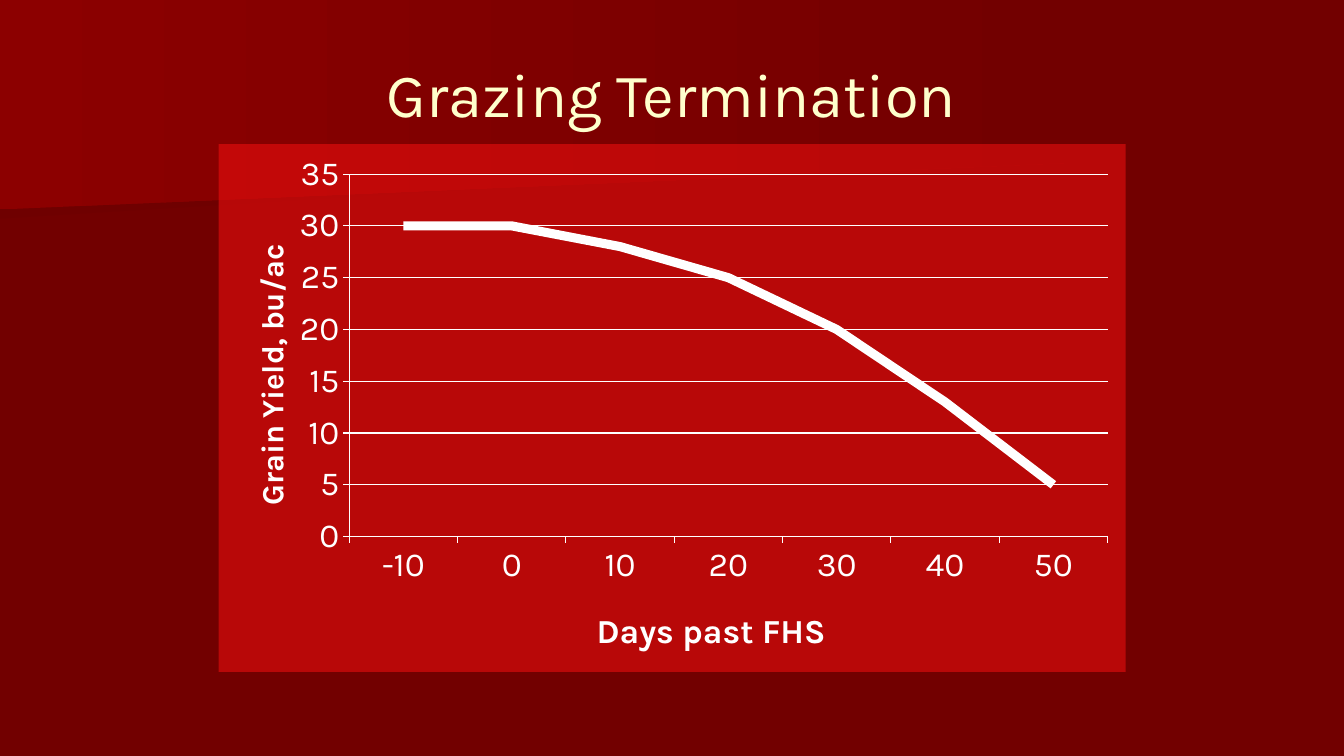
"""Build the Grazing Termination slide with its grain yield line chart."""
import pptx
import pptx.chart.data
import pptx.dml.color
import pptx.enum.chart
import pptx.enum.text
import pptx.oxml
import pptx.oxml.ns
import pptx.util

Cm = pptx.util.Cm
Pt = pptx.util.Pt
RGBColor = pptx.dml.color.RGBColor
qn = pptx.oxml.ns.qn

DARK_RED = RGBColor(0x72, 0x00, 0x00)
SHADE_RED = RGBColor(0x6F, 0x00, 0x00)
GLOW_RED = RGBColor(0x8C, 0x00, 0x00)
PANEL_RED = RGBColor(0xFF, 0x11, 0x11)
CREAM = RGBColor(0xFF, 0xFF, 0xCC)
WHITE = RGBColor(0xFF, 0xFF, 0xFF)

DAYS = ["-10", "0", "10", "20", "30", "40", "50"]
YIELDS = [30, 30, 28, 25, 20, 13, 5]


class SlideBuilder:
    """Hold the style and the current slide."""

    font_name = "Karla"

    def __init__(self, presentation):
        """Add a title-only slide with a dark red background."""
        self.slide = presentation.slides.add_slide(presentation.slide_layouts[5])
        background = self.slide.background.fill
        background.solid()
        background.fore_color.rgb = DARK_RED

    def style_font(self, font, size, color, bold=False):
        """Apply the slide's typeface with a size and colour."""
        font.name = self.font_name
        font.size = Pt(size)
        font.color.rgb = color
        font.bold = bold

    def add_band(self, points, start_color):
        """Draw a polygon that fades from left to right into the background."""
        vertices = [(Cm(x), Cm(y)) for x, y in points]
        builder = self.slide.shapes.build_freeform(*vertices[0])
        builder.add_line_segments(vertices[1:], close=True)
        band = builder.convert_to_shape()
        band.shadow.inherit = False
        band.line.fill.background()
        band.fill.gradient()
        band.fill.gradient_angle = 0
        for stop, color in zip(band.fill.gradient_stops, (start_color, DARK_RED)):
            stop.color.rgb = color

    def add_title(self, text, left, top, width, height):
        """Place the title in front of the bands."""
        title = self.slide.shapes.title
        title.element.getparent().append(title.element)
        title.left, title.top, title.width, title.height = map(Cm, (left, top, width, height))
        text_frame = title.text_frame
        text_frame.text = text
        text_frame.vertical_anchor = pptx.enum.text.MSO_ANCHOR.MIDDLE
        paragraph = text_frame.paragraphs[0]
        paragraph.alignment = pptx.enum.text.PP_ALIGN.CENTER
        self.style_font(paragraph.runs[0].font, 44, CREAM)

    def set_layout(self, element, index, inner=False, **fractions):
        """Position a chart part by fractions of the chart area."""
        current = element.find(qn("c:layout"))
        if current is not None:
            element.remove(current)
        target = '<c:layoutTarget val="inner"/>' if inner else ""
        modes = '<c:xMode val="edge"/><c:yMode val="edge"/>'
        values = "".join(f'<c:{key} val="{value}"/>' for key, value in fractions.items())
        element.insert(index, pptx.oxml.parse_xml(
            f'<c:layout {pptx.oxml.ns.nsdecls("c")}><c:manualLayout>'
            f"{target}{modes}{values}</c:manualLayout></c:layout>"))

    def format_axis(self, axis, title, title_size, x, y):
        """Style an axis and place its title."""
        axis.major_tick_mark = pptx.enum.chart.XL_TICK_MARK.OUTSIDE
        axis.minor_tick_mark = pptx.enum.chart.XL_TICK_MARK.NONE
        axis.format.line.color.rgb = WHITE
        axis.format.line.width = Pt(0.75)
        self.style_font(axis.tick_labels.font, 24, WHITE)
        text_frame = axis.axis_title.text_frame
        text_frame.text = title
        self.style_font(text_frame.paragraphs[0].runs[0].font, title_size, WHITE, bold=True)
        self.set_layout(text_frame._txBody.getparent().getparent(), 1, x=x, y=y)

    def add_panel_fill(self, chart):
        """Give the chart area a half-transparent red fill."""
        chart.element.find(qn("c:chart")).addnext(pptx.oxml.parse_xml(
            f'<c:spPr {pptx.oxml.ns.nsdecls("c", "a")}><a:solidFill>'
            f'<a:srgbClr val="{PANEL_RED}"><a:alpha val="50000"/></a:srgbClr>'
            "</a:solidFill><a:ln><a:noFill/></a:ln></c:spPr>"))

    def add_yield_chart(self, left, top, width, height):
        """Add the line chart of grain yield by termination day."""
        data = pptx.chart.data.CategoryChartData()
        data.categories = DAYS
        data.add_series("Series 1", YIELDS)
        chart = self.slide.shapes.add_chart(
            pptx.enum.chart.XL_CHART_TYPE.LINE,
            *map(Cm, (left, top, width, height)), data).chart
        self.style_font(chart.font, 24, WHITE)
        chart.has_legend = False
        chart.has_title = False
        self.add_panel_fill(chart)
        self.format_axis(chart.category_axis, "Days past FHS", 24, 0.41, 0.87)
        value_axis = chart.value_axis
        self.format_axis(value_axis, "Grain Yield, bu/ac", 22, 0.03, 0.18)
        value_axis.minimum_scale, value_axis.maximum_scale = 0, 35
        value_axis.major_unit = 5
        value_axis.has_major_gridlines = True
        value_axis.major_gridlines.format.line.color.rgb = WHITE
        value_axis.major_gridlines.format.line.width = Pt(0.75)
        plot = chart.plots[0]
        plot.vary_by_categories = False
        series = plot.series[0]
        series.smooth = False
        series.marker.style = pptx.enum.chart.XL_MARKER_STYLE.NONE
        series.format.line.color.rgb = WHITE
        series.format.line.width = Pt(6.5)
        plot_area = chart.element.find(qn("c:chart")).find(qn("c:plotArea"))
        self.set_layout(plot_area, 0, inner=True, x=0.144, y=0.057, w=0.836, h=0.687)


def main():
    """Build and save the presentation."""
    presentation = pptx.Presentation()
    presentation.slide_width = Cm(33.87)
    presentation.slide_height = Cm(19.05)
    builder = SlideBuilder(presentation)
    builder.add_band([(26.34, 3.89), (0, 5.51), (0, 2.57), (26.39, 2.57), (26.34, 3.25)], SHADE_RED)
    builder.add_band([(26.82, 4.11), (0, 5.28), (0, 0), (26.82, 0)], GLOW_RED)
    builder.add_title("Grazing Termination", 1.69, 0.76, 30.48, 3.18)
    builder.add_yield_chart(5.51, 3.63, 22.86, 13.3)
    presentation.save("out.pptx")


if __name__ == "__main__":
    main()
